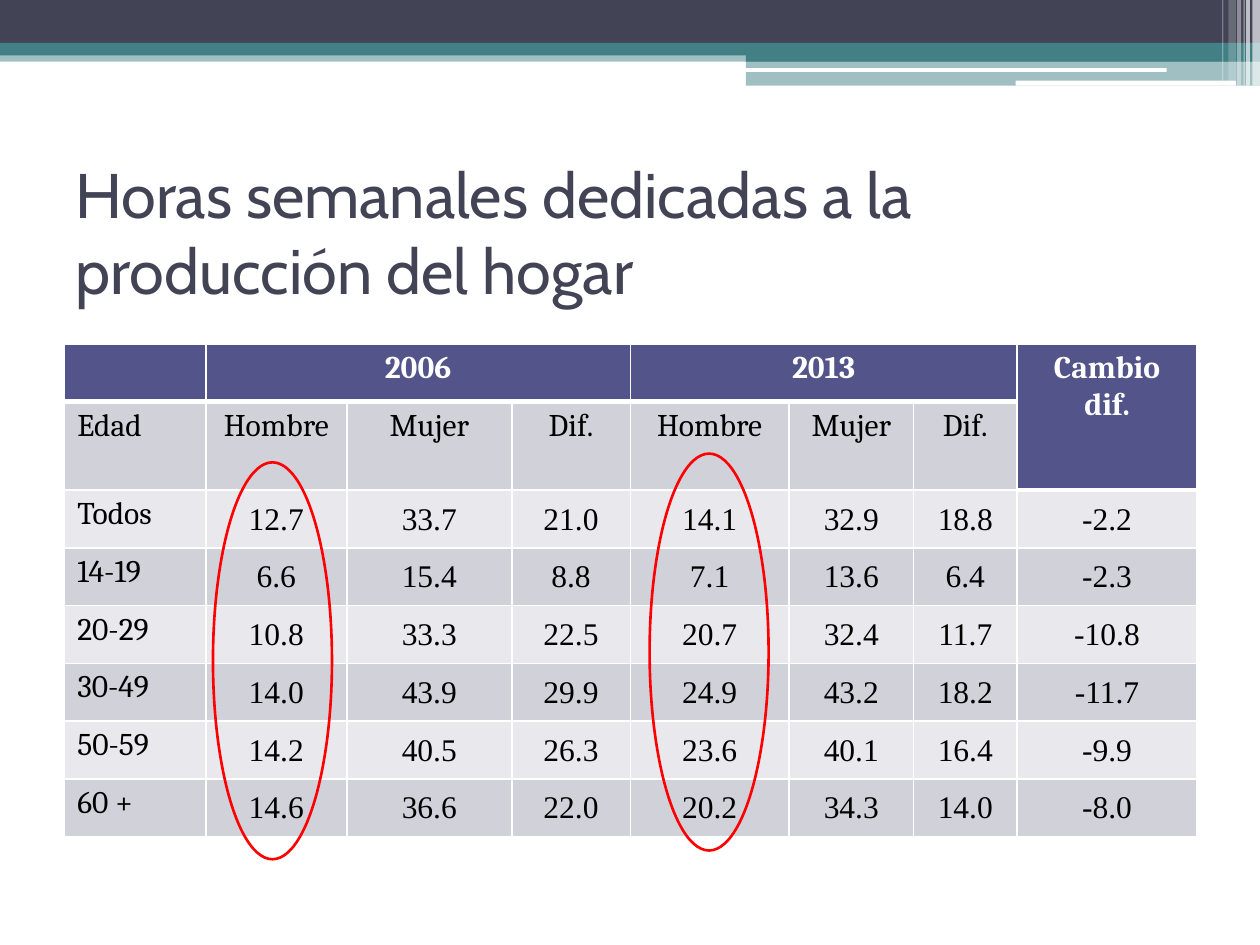
from lxml.etree import SubElement
from pptx import Presentation
from pptx.dml.color import RGBColor
from pptx.enum.shapes import MSO_SHAPE as Kind
from pptx.enum.text import MSO_ANCHOR as Anchor, PP_ALIGN as Align
from pptx.oxml.ns import qn
from pptx.util import Pt

DARK, TEAL, WHITE, RED = "424456", "438086", "FFFFFF", "FF0000"
HEAD, ODD, EVEN = "53548A", "D1D1DA", "E9E9ED"

BARS = [
    (0, 28.8, 720, 6.48, TEAL, 50),
    (0, 0, 720, 24.48, DARK, 100),
    (0, 24.48, 720, 7.2, TEAL, 100),
    (426.24, 28.08, 293.76, 7.2, TEAL, 100),
    (426.24, 34.56, 293.76, 14.4, TEAL, 50),
]
PILLS = [(425.5, 38.9, 241.2, 2.2), (580.3, 46.1, 126, 2.9)]
STRIPES = [
    (715.7, 4.3, 49, 65),
    (712.1, 2.2, 49, 65),
    (710.6, 0.7, 49, 60),
    (707, 2.2, 49, 40),
    (702, 4.3, 46.1, 20),
    (698.4, 0.7, 46.1, 30),
]
COLS = [80.6, 80.6, 94.3, 67.7, 90.7, 71.3, 59, 103]
ROWS = [33, 48] + [33] * 6
GRID = [
    ["", "2006", "", "", "2013", "", "", "Cambio dif."],
    ["Edad", "Hombre", "Mujer", "Dif.", "Hombre", "Mujer", "Dif.", ""],
    ["Todos", "12.7", "33.7", "21.0", "14.1", "32.9", "18.8", "-2.2"],
    ["14-19", "6.6", "15.4", "8.8", "7.1", "13.6", "6.4", "-2.3"],
    ["20-29", "10.8", "33.3", "22.5", "20.7", "32.4", "11.7", "-10.8"],
    ["30-49", "14.0", "43.9", "29.9", "24.9", "43.2", "18.2", "-11.7"],
    ["50-59", "14.2", "40.5", "26.3", "23.6", "40.1", "16.4", "-9.9"],
    ["60 +", "14.6", "36.6", "22.0", "20.2", "34.3", "14.0", "-8.0"],
]
SPANS = [(0, 1, 0, 3), (0, 4, 0, 6), (0, 7, 1, 7)]


def tint(code):
    return RGBColor.from_string(code)


class Deck:
    """Hold the style and the current slide, and draw each kind of element."""

    def __init__(self):
        self.show = Presentation()
        self.show.slide_width, self.show.slide_height = Pt(720), Pt(540)
        self.slide = self.show.slides.add_slide(self.show.slide_layouts[6])
        self.sans, self.serif, self.digit = "Cabin", "Cambria", "Times New Roman"

    def font(self, para, name, size, color, bold=False):
        font = para.font
        font.name, font.size, font.bold = name, Pt(size), bold
        font.color.rgb = tint(color)

    def shape(self, kind, x, y, w, h):
        item = self.slide.shapes.add_shape(kind, Pt(x), Pt(y), Pt(w), Pt(h))
        item.shadow.inherit = False
        return item

    def bar(self, x, y, w, h, color, alpha=100, kind=Kind.RECTANGLE):
        item = self.shape(kind, x, y, w, h)
        item.fill.solid()
        item.fill.fore_color.rgb = tint(color)
        item.line.fill.background()
        if alpha < 100:
            tone = item.fill._xPr.find(".//" + qn("a:srgbClr"))
            SubElement(tone, qn("a:alpha"), val=str(alpha * 1000))

    def ring(self, x, y, w, h):
        item = self.shape(Kind.OVAL, x, y, w, h)
        item.fill.background()
        item.line.color.rgb = tint(RED)
        item.line.width = Pt(1.5)

    def title(self, text, x, y, w, h):
        frame = self.slide.shapes.add_textbox(Pt(x), Pt(y), Pt(w), Pt(h)).text_frame
        frame.word_wrap, frame.vertical_anchor = True, Anchor.MIDDLE
        frame.text = text
        self.font(frame.paragraphs[0], self.sans, 36, DARK)

    def edge(self, cell, thick):
        prop = cell._tc.get_or_add_tcPr()
        for side in "LRTB":
            width = Pt(3 if side == "B" and thick else 1)
            line = SubElement(prop, qn("a:ln" + side), w=str(width))
            fill = SubElement(line, qn("a:solidFill"))
            SubElement(fill, qn("a:srgbClr"), val=WHITE)

    def cell(self, cell, text, row, col):
        head = row == 0 or (row == 1 and col == 7)
        self.edge(cell, head)
        cell.fill.solid()
        cell.fill.fore_color.rgb = tint(HEAD if head else ODD if row % 2 else EVEN)
        cell.text = text
        para = cell.text_frame.paragraphs[0]
        data = row > 1 and col > 0
        name = self.digit if data else self.serif
        self.font(para, name, 18, WHITE if head else "000000", head)
        if col:
            para.alignment = Align.CENTER
        if data:
            cell.vertical_anchor = Anchor.MIDDLE
            cell.margin_left = cell.margin_right = cell.margin_top = Pt(0.72)
            cell.margin_bottom = 0

    def table(self, x, y):
        size = Pt(sum(COLS)), Pt(sum(ROWS))
        table = self.slide.shapes.add_table(
            len(ROWS), len(COLS), Pt(x), Pt(y), *size).table
        for col, width in zip(table.columns, COLS):
            col.width = Pt(width)
        for row, height in zip(table.rows, ROWS):
            row.height = Pt(height)
        for r, line in enumerate(GRID):
            for c, text in enumerate(line):
                self.cell(table.cell(r, c), text, r, c)
        for top, left, low, right in SPANS:
            table.cell(top, left).merge(table.cell(low, right))


def main():
    deck = Deck()
    for bar in BARS:
        deck.bar(*bar)
    for pill in PILLS:
        deck.bar(*pill, WHITE, kind=Kind.ROUNDED_RECTANGLE)
    for x, w, h, alpha in STRIPES:
        deck.bar(x, 0, w, h, WHITE, alpha)
    deck.title("Horas semanales dedicadas a la producción del hogar", 36, 90, 648, 84)
    deck.table(37, 196.6)
    for x, y in [(121.7, 264.2), (371.2, 259.2)]:
        deck.ring(x, y, 68, 226.8)
    deck.show.save("out.pptx")


if __name__ == "__main__":
    main()
